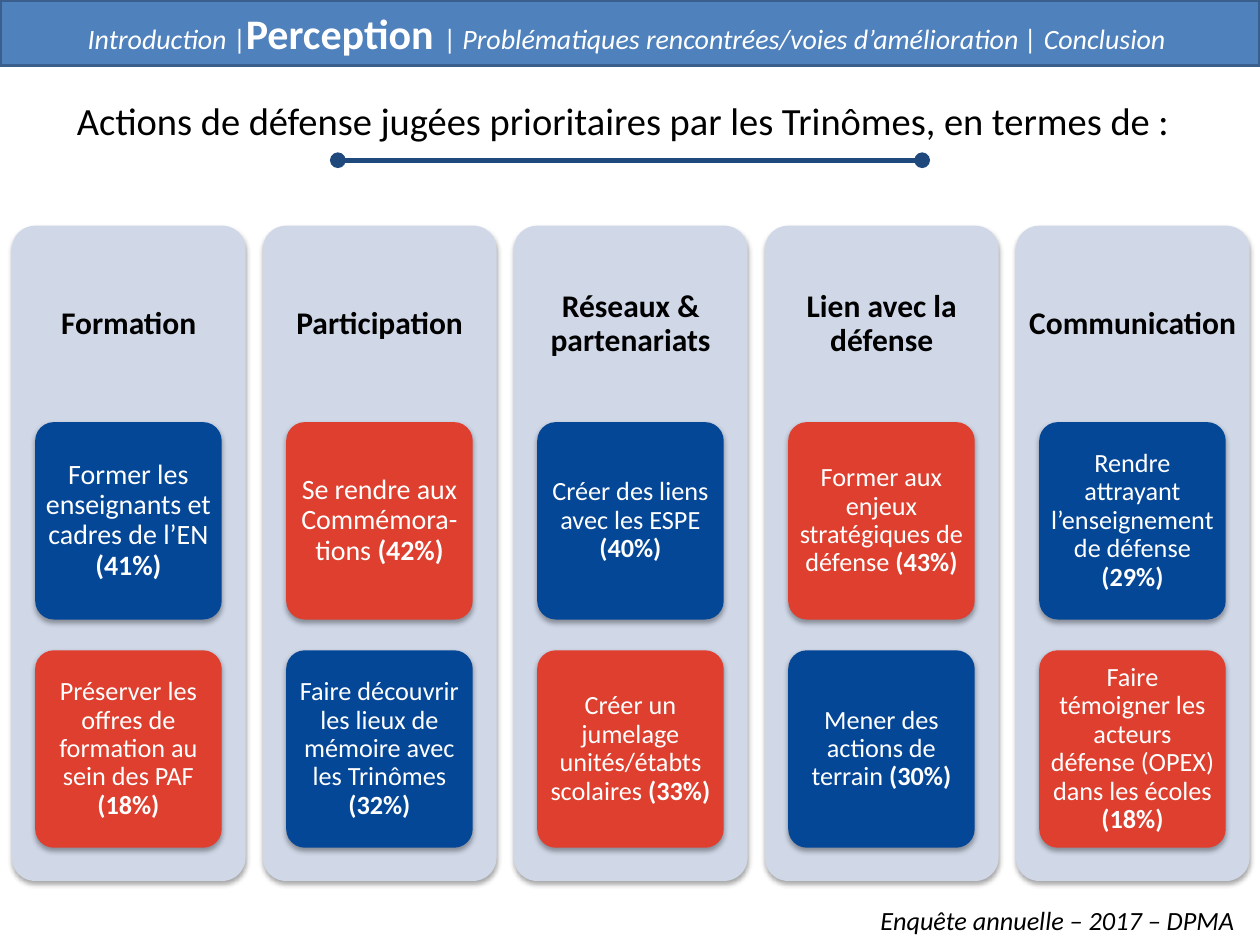
from dataclasses import dataclass
from lxml import etree
from pptx import Presentation, util as u
from pptx.dml.color import RGBColor as RGB
from pptx.enum import shapes as sh, text as tx
from pptx.oxml import parse_xml
from pptx.oxml.ns import nsdecls, qn

Cm = u.Cm


@dataclass(frozen=True)
class Theme:
    font: str = "Calibri"
    black: RGB = RGB(0, 0, 0)
    white: RGB = RGB(255, 255, 255)
    bar: RGB = RGB.from_string("4F81BD")
    edge: RGB = RGB.from_string("3A5F8C")
    rule: RGB = RGB.from_string("1F497D")
    panel: RGB = RGB.from_string("D0D8E8")
    blue: RGB = RGB.from_string("054797")
    red: RGB = RGB.from_string("DE3F2E")
    title: int = 22
    head: int = 18
    nav: int = 16
    focus: int = 24
    note: int = 15


T = Theme()
SHADOW = (f'<a:outerShdw {nsdecls("a")} blurRad="40000" dist="23000" dir="5400000" rotWithShape="0">'
          '<a:srgbClr val="000000"><a:alpha val="35000"/></a:srgbClr></a:outerShdw>')


def write(shape, parts, size, color, center=True, pad=None):
    """Fill one paragraph with runs and return it."""
    frame = shape.text_frame
    frame.word_wrap = True
    if center:
        frame.vertical_anchor = tx.MSO_ANCHOR.MIDDLE
    if pad is not None:
        frame.margin_left = frame.margin_right = Cm(pad)
        frame.margin_top = frame.margin_bottom = Cm(pad)
    para = frame.paragraphs[0]
    para.alignment = tx.PP_ALIGN.CENTER if center else tx.PP_ALIGN.LEFT
    para.font.name, para.font.size = T.font, u.Pt(size)
    para.font.color.rgb = color
    for part in parts:
        para.add_run().text = part
    return para


def rounded(left, top, width, height, fill):
    """Add a borderless rounded box with a soft shadow."""
    box = slide.shapes.add_shape(sh.MSO_SHAPE.ROUNDED_RECTANGLE,
                                 Cm(left), Cm(top), Cm(width), Cm(height))
    box.adjustments[0] = 0.1
    box.fill.solid()
    box.fill.fore_color.rgb = fill
    box.line.fill.background()
    box.shadow.inherit = False
    box._element.spPr.find(qn("a:effectLst")).append(parse_xml(SHADOW))
    return box


deck = Presentation()
deck.slide_width, deck.slide_height = Cm(25.4), Cm(19.05)
slide = deck.slides.add_slide(deck.slide_layouts[6])

# Navigation bar
bar = slide.shapes.add_shape(sh.MSO_SHAPE.RECTANGLE, 0, 0, Cm(25.4), Cm(1.32))
bar.fill.solid()
bar.fill.fore_color.rgb = T.bar
bar.line.color.rgb = T.edge
bar.line.width = u.Pt(2)
bar.shadow.inherit = False
nav = write(bar, ["Introduction ", "|", "Perception ", "| ",
                  "Problématiques rencontrées/voies d’amélioration | Conclusion "],
            T.nav, T.white)
nav.runs[0].font.italic = nav.runs[4].font.italic = True
nav.runs[2].font.size = u.Pt(T.focus)
nav.runs[2].font.bold = True

# Title and rule
title = slide.shapes.add_textbox(Cm(1.3), Cm(1.83), Cm(22.8), Cm(1.2))
write(title, ["Actions de défense jugées prioritaires par les Trinômes, en termes de :"],
      T.title, T.black, center=False)
title.text_frame.word_wrap = False

rule = slide.shapes.add_connector(sh.MSO_CONNECTOR.STRAIGHT,
                                  Cm(6.81), Cm(3.23), Cm(18.59), Cm(3.23))
rule.line.color.rgb = T.rule
rule.line.width = u.Pt(3)
line = rule.line._get_or_add_ln()
for end in ("a:headEnd", "a:tailEnd"):
    etree.SubElement(line, qn(end), type="oval")
etree.SubElement(rule._element.spPr, qn("a:effectLst"))

# Columns: heading, then (text, share, type size) for each card
COLS = [
    ("Formation", [("Former les enseignants et cadres de l’EN ", 41, 16),
                   ("Préserver les offres de formation au sein des PAF ", 18, 15)]),
    ("Participation", [("Se rendre aux Commémora-tions ", 42, 16),
                       ("Faire découvrir les lieux de mémoire avec les Trinômes ", 32, 15)]),
    ("Réseaux & partenariats", [("Créer des liens avec les ESPE ", 40, 15),
                                ("Créer un jumelage unités/étabts scolaires ", 33, 15)]),
    ("Lien avec la défense", [("Former aux enjeux stratégiques de défense ", 43, 15),
                              ("Mener des actions de terrain ", 30, 15)]),
    ("Communication", [("Rendre attrayant l’enseignement de défense ", 29, 15),
                       ("Faire témoigner les acteurs défense (OPEX) dans les écoles ", 18, 15)]),
]
for col, (name, cards) in enumerate(COLS):
    left = 0.24 + 5.06 * col
    rounded(left, 4.55, 4.71, 13.21, T.panel)
    head = slide.shapes.add_textbox(Cm(left), Cm(4.55), Cm(4.71), Cm(3.96))
    para = write(head, [name], T.head, T.black, pad=0.18)
    para.font.bold = True
    para.line_spacing = 0.9
    for row, (label, share, size) in enumerate(cards):
        fill = (T.blue, T.red)[(col + row) % 2]
        if col > 3:  # the last column keeps blue on top like the even ones
            fill = (T.blue, T.red)[row]
        card = rounded(left + 0.47, 8.51 + 4.6 * row, 3.76, 3.98, fill)
        para = write(card, [label, f"({share}%)"], size, T.white, pad=0.1)
        para.line_spacing = 0.9
        para.runs[1].font.bold = True

# Source note
note = slide.shapes.add_textbox(Cm(17.5), Cm(18.11), Cm(7.8), Cm(0.89))
para = write(note, ["Enquête annuelle – 2017 – DPMA"], T.note, T.black, center=False)
para.font.italic = True

deck.save("out.pptx")
